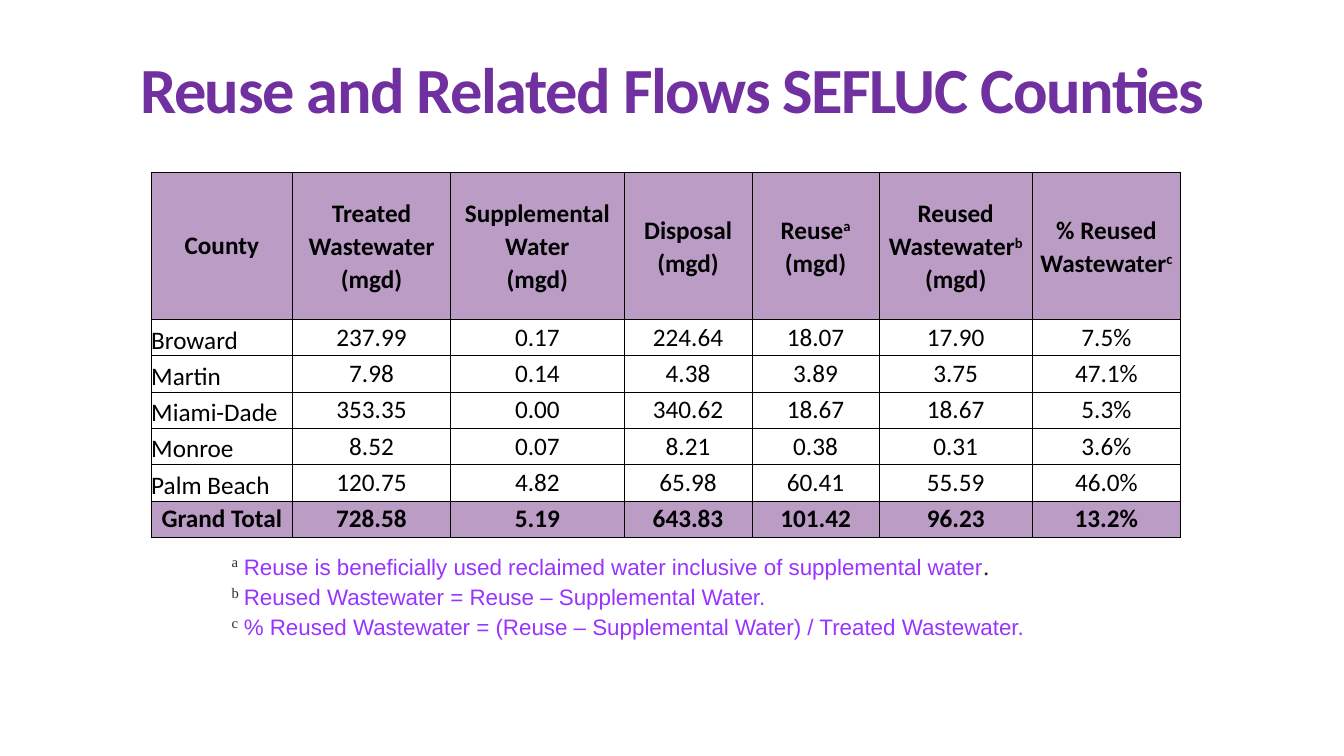
from dataclasses import dataclass

from lxml import etree
from pptx import Presentation
from pptx.dml.color import RGBColor
from pptx.enum.text import MSO_ANCHOR, MSO_AUTO_SIZE, PP_ALIGN
from pptx.oxml.ns import qn
from pptx.util import Inches, Pt

CENTER, LEFT = PP_ALIGN.CENTER, PP_ALIGN.LEFT
MIDDLE, BOTTOM, TOP = MSO_ANCHOR.MIDDLE, MSO_ANCHOR.BOTTOM, MSO_ANCHOR.TOP
FIT, FIXED = MSO_AUTO_SIZE.SHAPE_TO_FIT_TEXT, MSO_AUTO_SIZE.NONE


@dataclass(frozen=True)
class Font:
    name: str
    size: int
    color: str
    bold: bool = False
    base: int = 0
    track: int = 0


@dataclass(frozen=True)
class Theme:
    title: Font = Font("Calibri", 46, "7030A0", bold=True, track=-100)
    body: Font = Font("Calibri", 18, "000000")
    strong: Font = Font("Calibri", 18, "000000", bold=True)
    sup: Font = Font("Calibri", 18, "000000", bold=True, base=30000)
    mark: Font = Font("Times New Roman", 18, "2F2B20", base=30000)
    note: Font = Font("Arial", 16, "9933FF")
    stop: Font = Font("Times New Roman", 18, "2F2B20")
    band: str = "BA9CC5"
    rule: str = "000000"


LOOK = Theme()
COLS = [1.4, 1.57, 1.72, 1.27, 1.26, 1.52, 1.47]
HEAD_H, ROW_H = 1.46, 0.36

# Each heading is a list of paragraphs; "^" sets off a raised part.
HEADS = [
    ["County"],
    ["Treated Wastewater (mgd)"],
    ["Supplemental Water", "(mgd)"],
    ["Disposal (mgd)"],
    ["Reuse^a^ (mgd)"],
    ["Reused Wastewater^b ^(mgd)"],
    ["% Reused Wastewater^c"],
]
ROWS = [
    ["Broward", "237.99", "0.17", "224.64", "18.07", "17.90", "7.5%"],
    ["Martin", "7.98", "0.14", "4.38", "3.89", "3.75", "47.1%"],
    ["Miami-Dade", "353.35", "0.00", "340.62", "18.67", "18.67", "5.3%"],
    ["Monroe", "8.52", "0.07", "8.21", "0.38", "0.31", "3.6%"],
    ["Palm Beach", "120.75", "4.82", "65.98", "60.41", "55.59", "46.0%"],
    ["Grand Total", "728.58", "5.19", "643.83", "101.42", "96.23", "13.2%"],
]
NOTES = [
    ("a", "Reuse is beneficially used reclaimed water inclusive of supplemental water", "."),
    ("b", "Reused Wastewater = Reuse – Supplemental Water.", ""),
    ("c", "% Reused Wastewater = (Reuse – Supplemental Water) / Treated Wastewater.", ""),
]


def add_runs(para, parts):
    """Add (text, font) parts to a paragraph, one run each."""
    for text, style in parts:
        run = para.add_run()
        run.text = text
        font = run.font
        font.name, font.size, font.bold = style.name, Pt(style.size), style.bold
        font.color.rgb = RGBColor.from_string(style.color)
        props = run._r.get_or_add_rPr()
        if style.base:
            props.set("baseline", str(style.base))
        if style.track:
            props.set("spc", str(style.track))


def fill_frame(frame, lines, align, leading=None):
    for i, parts in enumerate(lines):
        para = frame.paragraphs[0] if i == 0 else frame.add_paragraph()
        para.alignment = align
        if leading:
            para.line_spacing = leading
        add_runs(para, parts)


def split_sup(text):
    """Turn text with "^" marks into plain and raised parts."""
    return [(part, LOOK.sup if i % 2 else LOOK.strong)
            for i, part in enumerate(text.split("^")) if part]


def add_tab(para, pos):
    tabs = etree.SubElement(para._p.get_or_add_pPr(), qn("a:tabLst"))
    etree.SubElement(tabs, qn("a:tab"), pos=str(Inches(pos)), algn="l")


def draw_edges(cell):
    props = cell._tc.get_or_add_tcPr()
    for side in ("lnL", "lnR", "lnT", "lnB"):
        line = etree.SubElement(props, qn(f"a:{side}"), w=str(Pt(0.5)))
        paint = etree.SubElement(line, qn("a:solidFill"))
        etree.SubElement(paint, qn("a:srgbClr"), val=LOOK.rule)


class Page:
    def __init__(self, deck):
        self.slide = deck.slides.add_slide(deck.slide_layouts[6])

    def text(self, box, lines, align=LEFT, anchor=TOP, size=FIXED):
        frame = self.slide.shapes.add_textbox(*map(Inches, box)).text_frame
        frame.word_wrap = True
        frame.auto_size = size
        frame.vertical_anchor = anchor
        fill_frame(frame, lines, align)
        return frame

    def notes(self, box):
        lines = [[(f"{key}\t", LOOK.mark), (text, LOOK.note)]
                 + ([(end, LOOK.stop)] if end else []) for key, text, end in NOTES]
        paras = self.text(box, lines, size=FIT).paragraphs
        for para in paras:
            add_tab(para, 0.12)
        paras[-1].space_after = Pt(18)

    def cell(self, cell, lines, align=CENTER, anchor=MIDDLE, pad=0, leading=None, band=False):
        cell.margin_left = cell.margin_right = Inches(pad)
        cell.margin_top = cell.margin_bottom = 0
        cell.vertical_anchor = anchor
        draw_edges(cell)
        if band:
            cell.fill.solid()
            cell.fill.fore_color.rgb = RGBColor.from_string(LOOK.band)
        else:
            cell.fill.background()
        fill_frame(cell.text_frame, lines, align, leading)

    def table(self, left, top):
        high = HEAD_H + ROW_H * len(ROWS)
        grid = self.slide.shapes.add_table(
            len(ROWS) + 1, len(COLS), Inches(left), Inches(top),
            Inches(sum(COLS)), Inches(high)).table
        grid.first_row = grid.horz_banding = False
        for col, wide in zip(grid.columns, COLS):
            col.width = Inches(wide)
        for i, row in enumerate(grid.rows):
            row.height = Inches(ROW_H if i else HEAD_H)
        for c, head in enumerate(HEADS):
            self.cell(grid.cell(0, c), [split_sup(line) for line in head],
                      pad=0.07 if c else 0, leading=1.07 if c else None, band=True)
        for r, row in enumerate(ROWS, 1):
            total = r == len(ROWS)
            font = LOOK.strong if total else LOOK.body
            for c, value in enumerate(row):
                name = c == 0 and not total
                self.cell(grid.cell(r, c), [[(value, font)]],
                          align=LEFT if name else CENTER,
                          anchor=BOTTOM if name else MIDDLE, band=total)


def main():
    deck = Presentation()
    deck.slide_width, deck.slide_height = Inches(13.33), Inches(7.5)
    page = Page(deck)
    page.text((0, 0.3, 13.33, 1.14),
              [[("Reuse and Related Flows SEFLUC Counties", LOOK.title)]], CENTER, MIDDLE)
    page.table(1.5, 1.71)
    page.notes((2.2, 5.41, 10.39, 0.94))
    deck.save("out.pptx")


if __name__ == "__main__":
    main()
